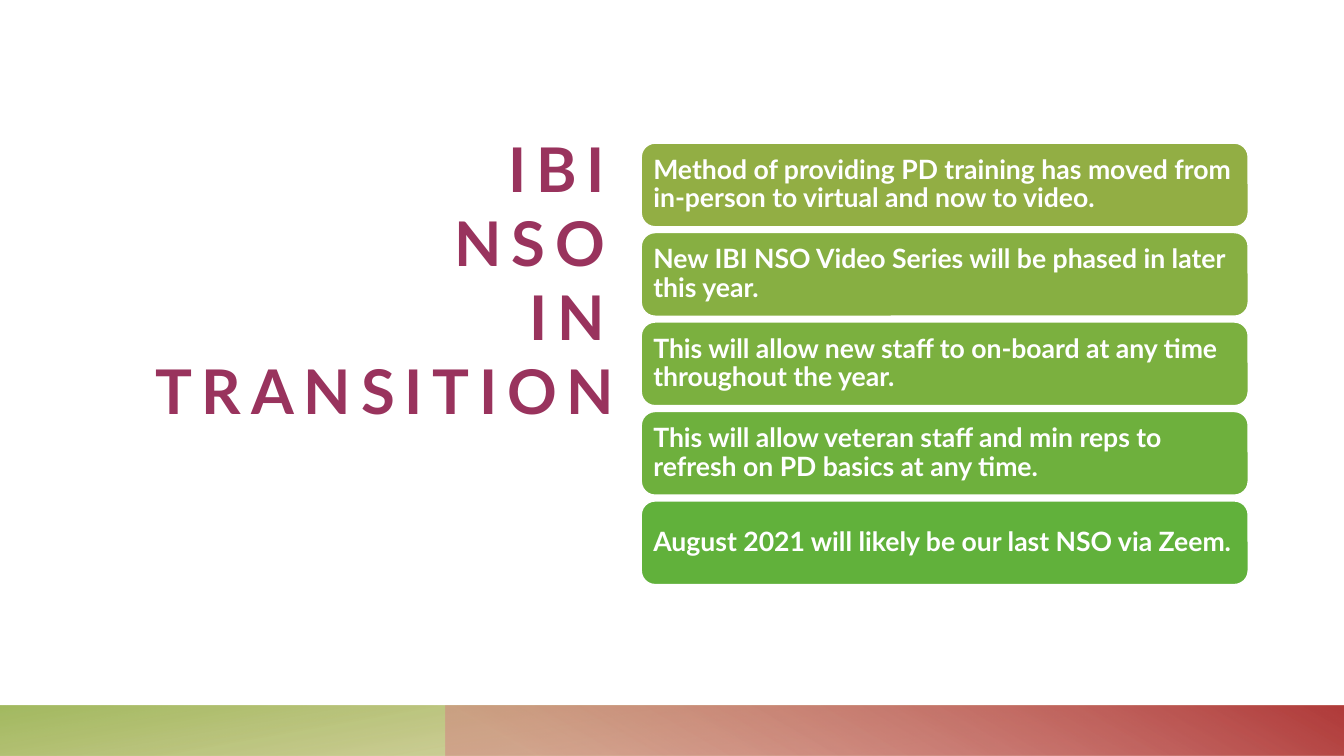
from dataclasses import dataclass

from pptx import Presentation
from pptx import util as u
from pptx.dml.color import RGBColor
from pptx.enum import shapes, text
from pptx.oxml.ns import qn
from pptx.slide import Slide
from pptx.text.text import TextFrame

FONT = "Lato"
WHITE = "FFFFFF"
CARD_LEFT, CARD_TOP, CARD_WIDTH, CARD_HEIGHT = 6.36, 1.42, 6.02, 0.83
LAST_CARD_TOP = 4.97


@dataclass
class Stop:
    position: float
    color: str
    opacity: int


@dataclass
class Band:
    left: float
    width: float
    rotation: int
    angle: int
    stops: tuple[Stop, Stop]


@dataclass
class Card:
    message: str
    color: str


BANDS = [
    Band(0, 13.33, 180, 100, (Stop(0.14, "B19E3B", 28), Stop(1, "92AE44", 85))),
    Band(4.42, 8.92, 0, 240, (Stop(0.09, "D68484", 55), Stop(0.99, "B13C3B", 100))),
]

CARDS = [
    Card("Method of providing PD training has moved from in-person to virtual and now to video.", "92AE44"),
    Card("New IBI NSO Video Series will be phased in later this year.", "87AF42"),
    Card("This will allow new staff to on-board at any time throughout the year.", "7BB03F"),
    Card("This will allow veteran staff and min reps to refresh on PD basics at any time.", "6EB03D"),
    Card("August 2021 will likely be our last NSO via Zeem.", "61B13B"),
]


def rgb(color: str) -> RGBColor:
    return RGBColor.from_string(color)


def write(frame: TextFrame, content: str, *, size: float, color: str,
          align: text.PP_ALIGN, anchor: text.MSO_ANCHOR, line_spacing: float = 1,
          letter_spacing: float = 0, insets: tuple = (0, 0, 0, 0)) -> None:
    frame.word_wrap = True
    frame.auto_size = text.MSO_AUTO_SIZE.NONE
    frame.vertical_anchor = anchor
    (frame.margin_left, frame.margin_top,
     frame.margin_right, frame.margin_bottom) = map(u.Inches, insets)
    frame.text = content
    paragraph = frame.paragraphs[0]
    paragraph.alignment = align
    paragraph.line_spacing = line_spacing
    for run in paragraph.runs:
        run.font.name = FONT
        run.font.size = u.Pt(size)
        run.font.bold = True
        run.font.color.rgb = rgb(color)
        if letter_spacing:
            run.font._element.set("spc", str(int(letter_spacing * 100)))


def draw_band(slide: Slide, band: Band) -> None:
    strip = slide.shapes.add_shape(
        shapes.MSO_SHAPE.RECTANGLE, u.Inches(band.left), u.Inches(7),
        u.Inches(band.width), u.Inches(0.5))
    strip.shadow.inherit = False
    strip.line.fill.background()
    strip.rotation = band.rotation
    strip._element.spPr.find(qn("a:xfrm")).set("flipH", "1")
    strip.fill.gradient()
    strip.fill.gradient_angle = 360 - band.angle
    for gradient_stop, stop in zip(strip.fill.gradient_stops, band.stops):
        gradient_stop.position = stop.position
        gradient_stop.color.rgb = rgb(stop.color)
    tints = strip._element.spPr.iter(qn("a:srgbClr"))
    for tint, stop in zip(list(tints), band.stops):
        alpha = tint.makeelement(qn("a:alpha"), {"val": str(stop.opacity * 1000)})
        tint.append(alpha)


def draw_card(slide: Slide, card: Card, top: float) -> None:
    panel = slide.shapes.add_shape(
        shapes.MSO_SHAPE.ROUNDED_RECTANGLE, u.Inches(CARD_LEFT), u.Inches(top),
        u.Inches(CARD_WIDTH), u.Inches(CARD_HEIGHT))
    panel.shadow.inherit = False
    panel.fill.solid()
    panel.fill.fore_color.rgb = rgb(card.color)
    panel.line.color.rgb = rgb(WHITE)
    panel.line.width = u.Pt(1)
    write(panel.text_frame, card.message, size=19, color=WHITE,
          align=text.PP_ALIGN.LEFT, anchor=text.MSO_ANCHOR.MIDDLE,
          line_spacing=0.9, insets=(0.08, 0.08, 0.06, 0.08))


def main() -> None:
    deck = Presentation()
    deck.slide_width, deck.slide_height = u.Inches(13.33), u.Inches(7.5)
    slide = deck.slides.add_slide(deck.slide_layouts.get_by_name("Title Only"))

    for band in BANDS:
        draw_band(slide, band)

    heading = slide.shapes.title
    heading.left, heading.top = u.Inches(0.69), u.Inches(1.3)
    heading.width, heading.height = u.Inches(5.41), u.Inches(4.24)
    write(heading.text_frame, "IBI\vNSO\vIN TRANSITION", size=44, color="99335D",
          align=text.PP_ALIGN.RIGHT, anchor=text.MSO_ANCHOR.TOP, letter_spacing=7)

    pitch = (LAST_CARD_TOP - CARD_TOP) / (len(CARDS) - 1)
    for row, card in enumerate(CARDS):
        draw_card(slide, card, CARD_TOP + row * pitch)

    deck.save("out.pptx")


if __name__ == "__main__":
    main()
